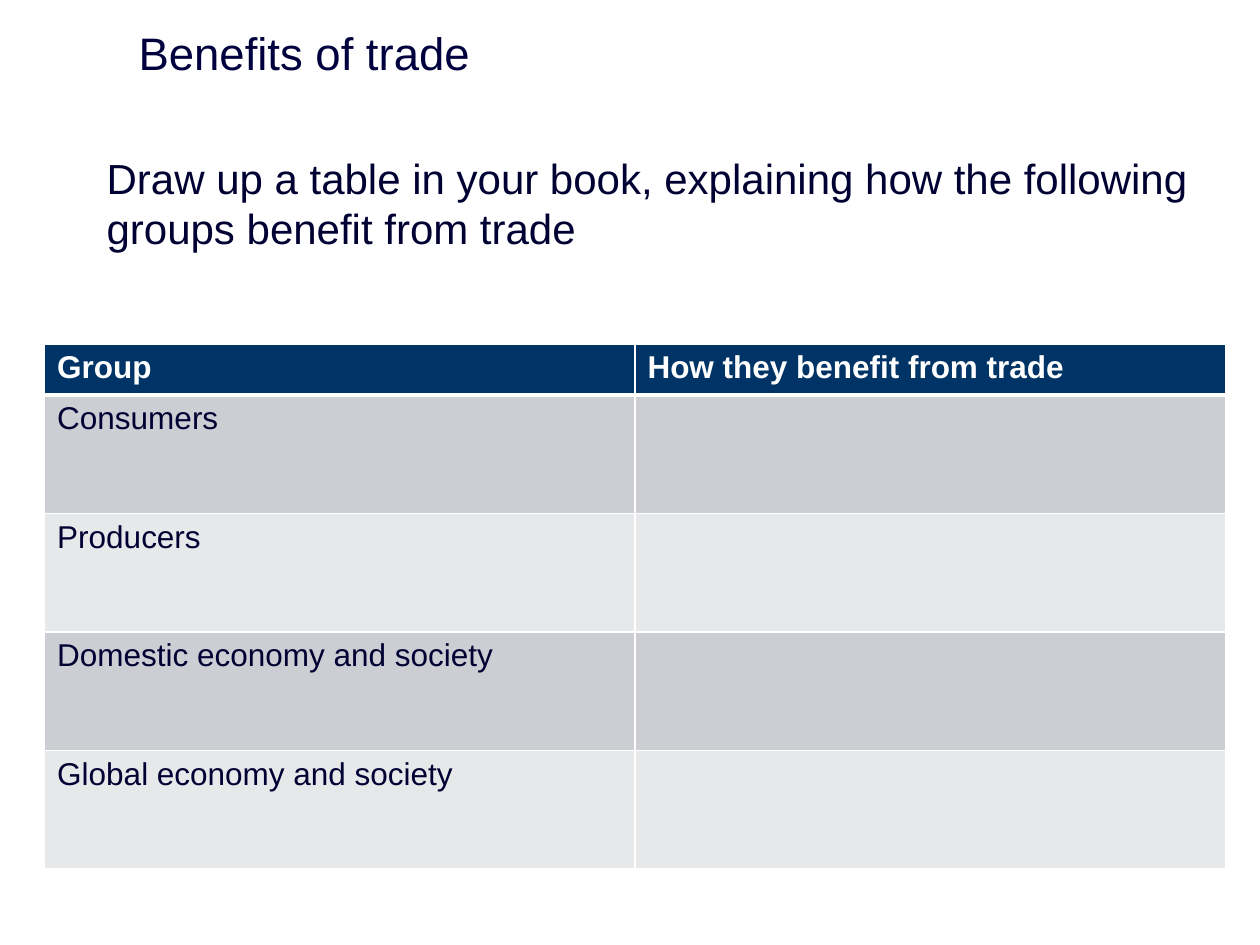
from pptx import Presentation
from pptx.dml.color import RGBColor
from pptx.enum.text import MSO_ANCHOR, PP_ALIGN
from pptx.oxml.ns import qn
from pptx.util import Cm, Pt
from lxml import etree

MIDDLE = MSO_ANCHOR.MIDDLE
TOP = MSO_ANCHOR.TOP
LEFT = PP_ALIGN.LEFT
TITLE_ONLY = 5

COLORS = {
    "title": "00003E",
    "text": "000032",
    "header": "003366",
    "dark_band": "CCCED3",
    "light_band": "E7E8EA",
    "white": "FFFFFF",
}
TITLE_FORMAT = {"name": "Arial", "size": Pt(26), "bold": False}
TASK_FORMAT = {"name": "Arial", "size": Pt(24), "bold": False}
HEADER_FORMAT = {"name": "Arial", "size": Pt(18), "bold": True}
CELL_FORMAT = {"name": "Arial", "size": Pt(18), "bold": False}

TASK = "Draw up a table in your book, explaining how the following groups benefit from trade"
ROWS = [
    ("Group", "How they benefit from trade"),
    ("Consumers", ""),
    ("Producers", ""),
    ("Domestic economy and society", ""),
    ("Global economy and society", ""),
]


def write_text(text_frame, text, font_format, color):
    text_frame.text = text
    paragraph = text_frame.paragraphs[0]
    paragraph.alignment = LEFT
    for attribute, value in font_format.items():
        setattr(paragraph.font, attribute, value)
    paragraph.font.color.rgb = RGBColor.from_string(COLORS[color])


def add_title(slide, text):
    title = slide.shapes.title
    title.left, title.top, title.width, title.height = Cm(2.54), Cm(0.41), Cm(22.86), Cm(1.3)
    write_text(title.text_frame, text, TITLE_FORMAT, "title")
    title.text_frame.vertical_anchor = MIDDLE


def add_task(slide, text):
    box = slide.shapes.add_textbox(Cm(1.9), Cm(2.95), Cm(22.43), Cm(12.57))
    box.text_frame.word_wrap = True
    box.text_frame.vertical_anchor = TOP
    write_text(box.text_frame, text, TASK_FORMAT, "text")


def set_borders(cell, widths):
    properties = cell._tc.get_or_add_tcPr()
    for index, (side, width) in enumerate(widths.items()):
        line = etree.Element(qn(f"a:{side}"), w=str(Pt(width)))
        fill = etree.SubElement(line, qn("a:solidFill"))
        etree.SubElement(fill, qn("a:srgbClr"), val=COLORS["white"])
        properties.insert(index, line)


def add_benefits_table(slide, rows):
    frame = slide.shapes.add_table(len(rows), 2, Cm(0.9), Cm(6.93), Cm(23.8), Cm(10.59))
    table = frame.table
    for row_index, texts in enumerate(rows):
        is_header = row_index == 0
        table.rows[row_index].height = Cm(1.03 if is_header else 2.39)
        band = "header" if is_header else ("light_band", "dark_band")[row_index % 2]
        font_format = HEADER_FORMAT if is_header else CELL_FORMAT
        widths = {
            "lnL": 1,
            "lnR": 1,
            "lnT": 3 if row_index == 1 else 1,
            "lnB": 3 if is_header else 1,
        }
        for column_index, text in enumerate(texts):
            cell = table.cell(row_index, column_index)
            cell.fill.solid()
            cell.fill.fore_color.rgb = RGBColor.from_string(COLORS[band])
            write_text(cell.text_frame, text, font_format, "white" if is_header else "text")
            set_borders(cell, widths)


def main():
    presentation = Presentation()
    presentation.slide_width = Cm(25.4)
    presentation.slide_height = Cm(19.05)
    slide = presentation.slides.add_slide(presentation.slide_layouts[TITLE_ONLY])
    add_title(slide, "Benefits of trade")
    add_task(slide, TASK)
    add_benefits_table(slide, ROWS)
    presentation.save("out.pptx")


if __name__ == "__main__":
    main()
